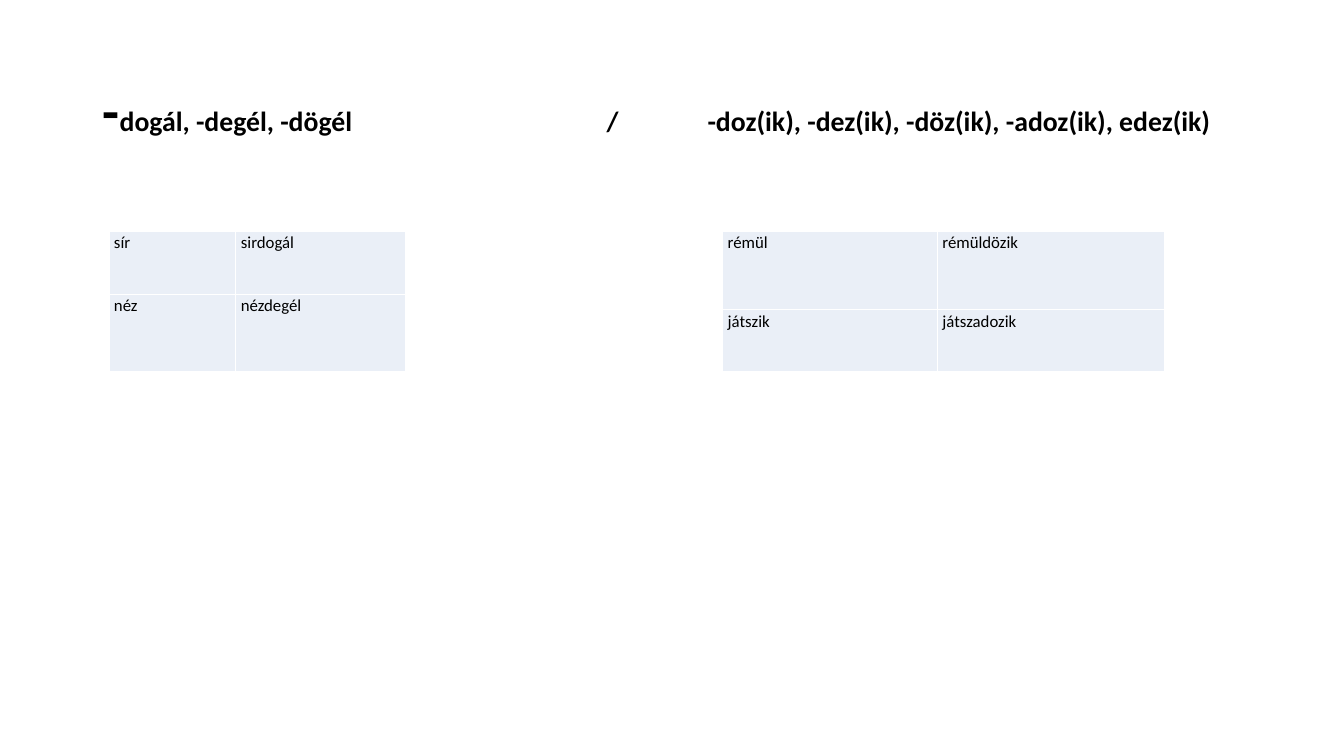
from lxml import etree
from pptx import Presentation
from pptx.dml.color import RGBColor
from pptx.enum.text import MSO_ANCHOR, PP_ALIGN
from pptx.oxml.ns import qn
from pptx.util import Pt

LEFT, MIDDLE = PP_ALIGN.LEFT, MSO_ANCHOR.MIDDLE
FONT = "Calibri"
COLORS = {"text": "000000", "cell": "EAEFF7", "border": "FFFFFF"}

TITLE_RUNS = [
    ("-", 39.6),
    ("dogál, -degél, -dögél\t/\t-doz(ik), -dez(ik), -döz(ik), -adoz(ik), edez(ik)", 19.8),
]
TITLE_BOX = (66.2, 28.8, 828, 104.4)
TITLE_TABS = (360, 432)

TABLE_TOP = 165
TABLES = [
    {"left": 77.8, "cols": (90.7, 121), "rows": (45.4, 54.7),
     "words": [("sír", "sirdogál"), ("néz", "nézdegél")]},
    {"left": 516.2, "cols": (153.4, 162), "rows": (56.2, 43.9),
     "words": [("rémül", "rémüldözik"), ("játszik", "játszadozik")]},
]


def style_font(font, size, bold=False):
    font.name = FONT
    font.size = Pt(size)
    font.bold = bold
    font.color.rgb = RGBColor.from_string(COLORS["text"])


def add_borders(cell):
    tc_pr = cell._tc.get_or_add_tcPr()
    for i, side in enumerate(("lnL", "lnR", "lnT", "lnB")):
        ln = etree.Element(qn(f"a:{side}"), w=str(Pt(1)))
        fill = etree.SubElement(ln, qn("a:solidFill"))
        etree.SubElement(fill, qn("a:srgbClr"), val=COLORS["border"])
        tc_pr.insert(i, ln)


def fill_title(title):
    title.left, title.top, title.width, title.height = map(Pt, TITLE_BOX)
    tf = title.text_frame
    tf.word_wrap = True
    tf.vertical_anchor = MIDDLE
    p = tf.paragraphs[0]
    tabs = etree.SubElement(p._p.get_or_add_pPr(), qn("a:tabLst"))
    for pos in TITLE_TABS:
        etree.SubElement(tabs, qn("a:tab"), pos=str(Pt(pos)), algn="l")
    p.alignment = LEFT
    p.line_spacing = 0.9
    for text, size in TITLE_RUNS:
        r = p.add_run()
        r.text = text
        style_font(r.font, size, bold=True)


def fill_cell(cell, word):
    cell.fill.solid()
    cell.fill.fore_color.rgb = RGBColor.from_string(COLORS["cell"])
    add_borders(cell)
    cell.margin_left = cell.margin_right = Pt(3.6)
    cell.margin_top = cell.margin_bottom = 0
    p = cell.text_frame.paragraphs[0]
    p.text = word
    p.line_spacing = 1.07
    style_font(p.runs[0].font, 12)


def add_word_table(slide, left, cols, rows, words):
    table = slide.shapes.add_table(
        len(rows), len(cols), Pt(left), Pt(TABLE_TOP), Pt(sum(cols)), Pt(sum(rows))).table
    table.first_row = table.horz_banding = False
    for column, width in zip(table.columns, cols):
        column.width = Pt(width)
    for row, height, row_words in zip(table.rows, rows, words):
        row.height = Pt(height)
        for cell, word in zip(row.cells, row_words):
            fill_cell(cell, word)


def main():
    prs = Presentation()
    prs.slide_width, prs.slide_height = Pt(960), Pt(540)
    slide = prs.slides.add_slide(prs.slide_layouts[5])
    fill_title(slide.shapes.title)
    for table in TABLES:
        add_word_table(slide, **table)
    prs.save("out.pptx")


if __name__ == "__main__":
    main()
